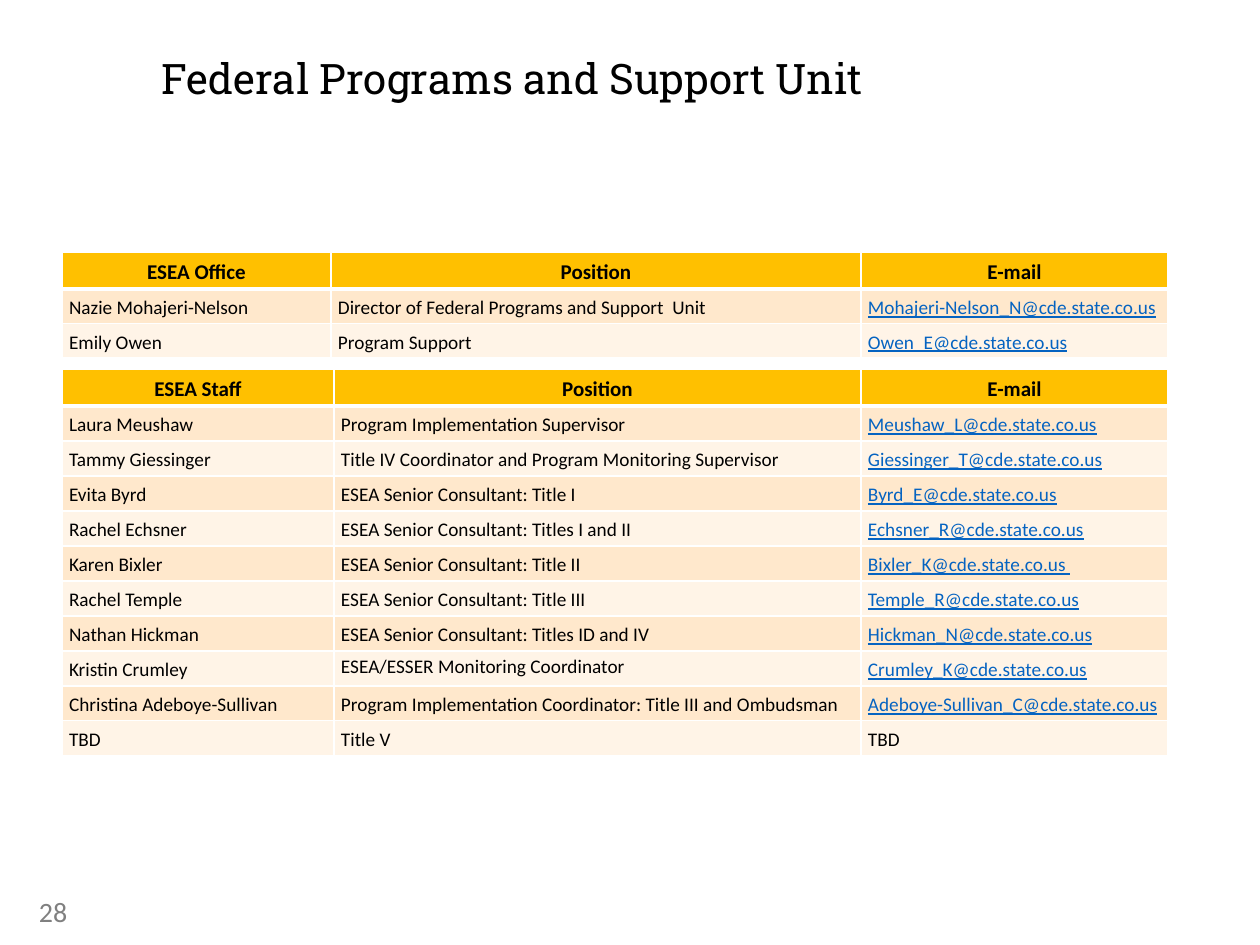
from dataclasses import dataclass

from lxml.etree import SubElement
from pptx import Presentation
from pptx.dml.color import RGBColor
from pptx.enum.text import MSO_ANCHOR, PP_ALIGN
from pptx.oxml.ns import qn
from pptx.util import Emu, Pt

PX_PER_INCH = 126
COLORS = {
    "text": "000000",
    "number": "808080",
    "link": "0563C1",
    "header": "FFC000",
    "odd": "FFE8CC",
    "even": "FFF4E7",
    "border": "FFFFFF",
}
MAIL_HOST = "@cde.state.co.us"


@dataclass(frozen=True)
class Person:
    name: str
    position: str
    mail: str
    line_spacing: float = 1.15


@dataclass(frozen=True)
class StaffTable:
    heading: str
    top: int
    columns: tuple[int, int, int]
    header_height: int
    row_height: int
    people: tuple[Person, ...]


TABLES = (
    StaffTable("ESEA Office", 252, (269, 530, 307), 35, 32, (
        Person("Nazie Mohajeri-Nelson", "Director of Federal Programs and Support  Unit",
               "Mohajeri-Nelson_N" + MAIL_HOST),
        Person("Emily Owen", "Program Support", "Owen_E" + MAIL_HOST),
    )),
    StaffTable("ESEA Staff", 369, (272, 527, 307), 32, 35, (
        Person("Laura Meushaw", "Program Implementation Supervisor", "Meushaw_L" + MAIL_HOST),
        Person("Tammy Giessinger", "Title IV Coordinator and Program Monitoring Supervisor",
               "Giessinger_T" + MAIL_HOST),
        Person("Evita Byrd", "ESEA Senior Consultant: Title I", "Byrd_E" + MAIL_HOST),
        Person("Rachel Echsner", "ESEA Senior Consultant: Titles I and II",
               "Echsner_R" + MAIL_HOST),
        Person("Karen Bixler", "ESEA Senior Consultant: Title II", "Bixler_K" + MAIL_HOST + " "),
        Person("Rachel Temple", "ESEA Senior Consultant: Title III", "Temple_R" + MAIL_HOST),
        Person("Nathan Hickman", "ESEA Senior Consultant: Titles ID and IV",
               "Hickman_N" + MAIL_HOST),
        Person("Kristin Crumley", "ESEA/ESSER Monitoring Coordinator",
               "Crumley_K" + MAIL_HOST, line_spacing=1.0),
        Person("Christina Adeboye-Sullivan",
               "Program Implementation Coordinator: Title III and Ombudsman",
               "Adeboye-Sullivan_C" + MAIL_HOST),
        Person("TBD", "Title V", "TBD"),
    )),
)


def px(length: int) -> Emu:
    return Emu(round(length * 914400 / PX_PER_INCH))


def place(shape, left: int, top: int, width: int, height: int) -> None:
    shape.left, shape.top = px(left), px(top)
    shape.width, shape.height = px(width), px(height)


def set_margins(target, side: int, end: int) -> None:
    target.margin_left = target.margin_right = px(side)
    target.margin_top = target.margin_bottom = px(end)


def add_span(para, text: str, size: int, color: str = "text", font: str = "Calibri",
             bold: bool = False, underline: bool = False) -> None:
    span = para.add_run()
    span.text = text
    span.font.name = font
    span.font.size = Pt(size)
    span.font.bold = bold
    span.font.underline = underline
    span.font.color.rgb = RGBColor.from_string(COLORS[color])


def add_borders(cell, widths: dict[str, int]) -> None:
    properties = cell._tc.get_or_add_tcPr()
    for side, width in widths.items():
        line = SubElement(properties, qn(f"a:ln{side}"), w=str(Pt(width)))
        fill = SubElement(line, qn("a:solidFill"))
        SubElement(fill, qn("a:srgbClr"), val=COLORS["border"])


def style_cell(cell, fill: str, widths: dict[str, int]) -> None:
    add_borders(cell, widths)
    cell.fill.solid()
    cell.fill.fore_color.rgb = RGBColor.from_string(COLORS[fill])
    set_margins(cell, 7, 4)


def add_staff_table(page, staff: StaffTable) -> None:
    count = len(staff.people) + 1
    height = staff.header_height + staff.row_height * len(staff.people)
    frame = page.shapes.add_table(count, 3, px(62), px(staff.top),
                                  px(sum(staff.columns)), px(height))
    table = frame.table
    for column, width in zip(table.columns, staff.columns):
        column.width = px(width)
    for index, row in enumerate(table.rows):
        row.height = px(staff.row_height if index else staff.header_height)

    for column, heading in enumerate((staff.heading, "Position", "E-mail")):
        cell = table.cell(0, column)
        style_cell(cell, "header", {"L": 1, "R": 1, "T": 1, "B": 3})
        para = cell.text_frame.paragraphs[0]
        para.alignment = PP_ALIGN.CENTER
        para.line_spacing = 1.15
        add_span(para, heading, 12, bold=True)

    for row, person in enumerate(staff.people, start=1):
        for column, text in enumerate((person.name, person.position, person.mail)):
            cell = table.cell(row, column)
            style_cell(cell, "odd" if row % 2 else "even", {"L": 1, "R": 1, "B": 1})
            para = cell.text_frame.paragraphs[0]
            para.line_spacing = person.line_spacing if column == 1 else 1.15
            is_mail = "@" in text
            add_span(para, text, 11, "link" if is_mail else "text", underline=is_mail)


def add_title(page) -> None:
    title = page.shapes.title
    place(title, 161, 58, 711, 82)
    box = title.text_frame
    box.vertical_anchor = MSO_ANCHOR.TOP
    set_margins(box, 0, 0)
    para = box.paragraphs[0]
    para.alignment = PP_ALIGN.LEFT
    para.line_spacing = 0.9
    add_span(para, "Federal Programs and Support Unit", 24, font="Roboto Slab")


def add_page_number(page) -> None:
    box = page.shapes.add_textbox(px(30), px(886), px(284), px(50)).text_frame
    box.word_wrap = True
    box.vertical_anchor = MSO_ANCHOR.MIDDLE
    set_margins(box, 9, 5)
    add_span(box.paragraphs[0], "28", 16, "number")


def main() -> None:
    deck = Presentation()
    deck.slide_width, deck.slide_height = px(1260), px(945)
    page = deck.slides.add_slide(deck.slide_layouts[5])
    add_title(page)
    add_page_number(page)
    for staff in TABLES:
        add_staff_table(page, staff)
    deck.save("out.pptx")


if __name__ == "__main__":
    main()
